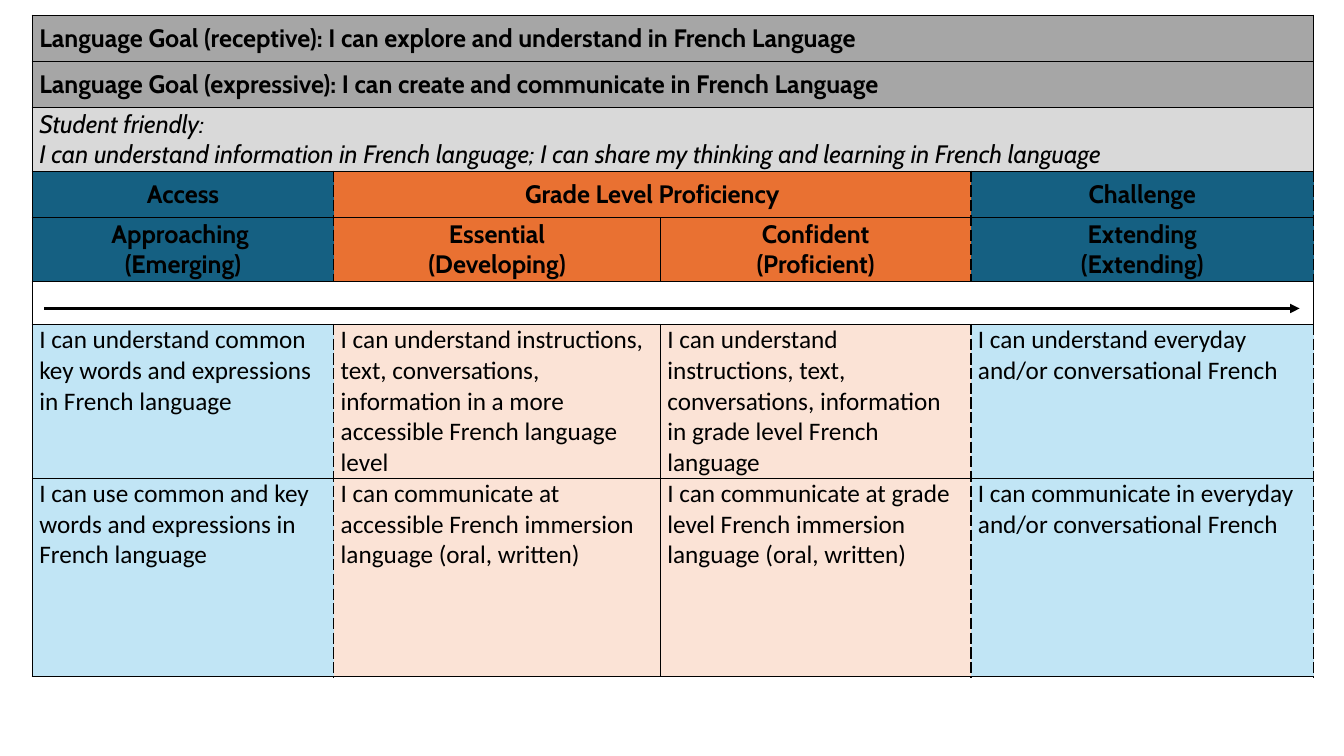
from dataclasses import dataclass

from lxml import etree
from pptx import Presentation
from pptx import util as u
from pptx.dml.color import RGBColor
from pptx.enum import shapes, text
from pptx.oxml import ns


@dataclass(frozen=True)
class Theme:
    ink: str = "000000"
    goal: str = "A6A6A6"
    friendly: str = "D9D9D9"
    outer_head: str = "156082"
    grade_head: str = "E97132"
    outer_body: str = "C1E5F5"
    grade_body: str = "FBE3D6"
    head_font: str = "Cabin"
    body_font: str = "Calibri"
    size: int = 18
    border: float = 1
    arrow: float = 2.25


COLUMNS = [2.99, 3.24, 3.08, 3.4]
ROWS = [0.46, 0.46, 0.63, 0.46, 0.63, 0.43, 1.5, 1.97]
LAST = len(COLUMNS) - 1
ARROW_ROW = 5

# Dashes set the grade-level columns apart from those on either side.
DASHED_SIDES = ["R", "L", "R", "LR"]

GOALS = [
    "Language Goal (receptive): I can explore and understand in French Language",
    "Language Goal (expressive): I can create and communicate in French Language",
]
FRIENDLY = (
    "Student friendly:\n"
    "I can understand information in French language; "
    "I can share my thinking and learning in French language"
)
LEVELS = [
    "Approaching \n(Emerging)",
    "Essential\n(Developing)",
    "Confident\n(Proficient)",
    "Extending\n(Extending)",
]
STATEMENTS = [
    [
        "I can understand common key words and expressions in French language",
        "I can understand instructions, text, conversations, information in a more "
        "accessible French language level",
        "I can understand instructions, text, conversations, information in grade "
        "level French language",
        "I can understand everyday and/or conversational French",
    ],
    [
        "I can use common and key words and expressions in French language",
        "I can communicate at accessible French immersion language (oral, written)",
        "I can communicate at grade level French immersion language (oral, written)",
        "I can communicate in everyday and/or conversational French",
    ],
]


class RubricSlide:
    def __init__(self, page, theme):
        self.page = page
        self.theme = theme

    def set_text(self, frame, words, font, bold=False, italic=False, align=None):
        """Fill a text frame, one paragraph for each line of words."""
        for index, line in enumerate(words.split("\n")):
            para = frame.add_paragraph() if index else frame.paragraphs[0]
            para.alignment = align
            span = para.add_run()
            span.text = line
            span.font.name = font
            span.font.size = u.Pt(self.theme.size)
            span.font.bold = bold
            span.font.italic = italic
            span.font.color.rgb = RGBColor.from_string(self.theme.ink)

    def add_grid(self, left, top, columns, rows):
        frame = self.page.shapes.add_table(
            len(rows), len(columns), u.Inches(left), u.Inches(top),
            u.Inches(sum(columns)), u.Inches(sum(rows)),
        )
        grid = frame.table
        grid.first_row = grid.horz_banding = False
        for column, width in zip(grid.columns, columns):
            column.width = u.Inches(width)
        for row, height in zip(grid.rows, rows):
            row.height = u.Inches(height)
        return grid

    def add_borders(self, cell, dashed=""):
        """Outline a cell; dashed names the sides (L, R, T, B) drawn with dashes."""
        properties = cell._tc.get_or_add_tcPr()
        for index, side in enumerate("LRTB"):
            line = etree.Element(ns.qn(f"a:ln{side}"), w=str(u.Pt(self.theme.border)))
            fill = etree.SubElement(line, ns.qn("a:solidFill"))
            etree.SubElement(fill, ns.qn("a:srgbClr"), val=self.theme.ink)
            dash = "sysDash" if side in dashed else "solid"
            etree.SubElement(line, ns.qn("a:prstDash"), val=dash)
            properties.insert(index, line)

    def fill_cell(self, grid, row, column, words, fill, span=1, dashed="",
                  middle=True, **style):
        cell = grid.cell(row, column)
        if span > 1:
            cell.merge(grid.cell(row, column + span - 1))
        for offset in range(span):
            self.add_borders(grid.cell(row, column + offset), dashed)
        if fill:
            cell.fill.solid()
            cell.fill.fore_color.rgb = RGBColor.from_string(fill)
        else:
            cell.fill.background()
        if words:
            cell.margin_left = cell.margin_right = u.Inches(0.07)
            cell.margin_top = cell.margin_bottom = 0
            if middle:
                cell.vertical_anchor = text.MSO_ANCHOR.MIDDLE
            self.set_text(cell.text_frame, words, **style)

    def add_arrow(self, start, end, height):
        arrow = self.page.shapes.add_connector(
            shapes.MSO_CONNECTOR.STRAIGHT,
            u.Inches(start), u.Inches(height), u.Inches(end), u.Inches(height),
        )
        arrow.line.color.rgb = RGBColor.from_string(self.theme.ink)
        arrow.line.width = u.Pt(self.theme.arrow)
        properties = arrow._element.spPr
        outline = properties.find(ns.qn("a:ln"))
        etree.SubElement(outline, ns.qn("a:tailEnd"), type="triangle")
        etree.SubElement(properties, ns.qn("a:effectLst"))


def main():
    deck = Presentation()
    deck.slide_width, deck.slide_height = u.Inches(13.33), u.Inches(7.5)
    theme = Theme()
    slide = RubricSlide(deck.slides.add_slide(deck.slide_layouts[6]), theme)
    grid = slide.add_grid(0.32, 0.15, COLUMNS, ROWS)

    for row, goal in enumerate(GOALS):
        slide.fill_cell(grid, row, 0, goal, theme.goal, span=4,
                        font=theme.head_font, bold=True)
    slide.fill_cell(grid, 2, 0, FRIENDLY, theme.friendly, span=4,
                    font=theme.head_font, italic=True)
    slide.fill_cell(grid, ARROW_ROW, 0, "", None, span=4)

    heading = dict(font=theme.head_font, bold=True, align=text.PP_ALIGN.CENTER)
    slide.fill_cell(grid, 3, 0, "Access", theme.outer_head, dashed="R", **heading)
    slide.fill_cell(grid, 3, 1, "Grade Level Proficiency", theme.grade_head,
                    span=2, dashed="LR", **heading)
    slide.fill_cell(grid, 3, LAST, "Challenge", theme.outer_head, dashed="LR", **heading)

    for column, (level, dashed) in enumerate(zip(LEVELS, DASHED_SIDES)):
        outer = column in (0, LAST)
        slide.fill_cell(grid, 4, column, level,
                        theme.outer_head if outer else theme.grade_head,
                        dashed=dashed, **heading)
        for row, statements in enumerate(STATEMENTS, ARROW_ROW + 1):
            slide.fill_cell(grid, row, column, statements[column],
                            theme.outer_body if outer else theme.grade_body,
                            dashed=dashed, middle=False, font=theme.body_font)

    slide.add_arrow(0.44, 12.89, 3.06)
    deck.save("out.pptx")


if __name__ == "__main__":
    main()
